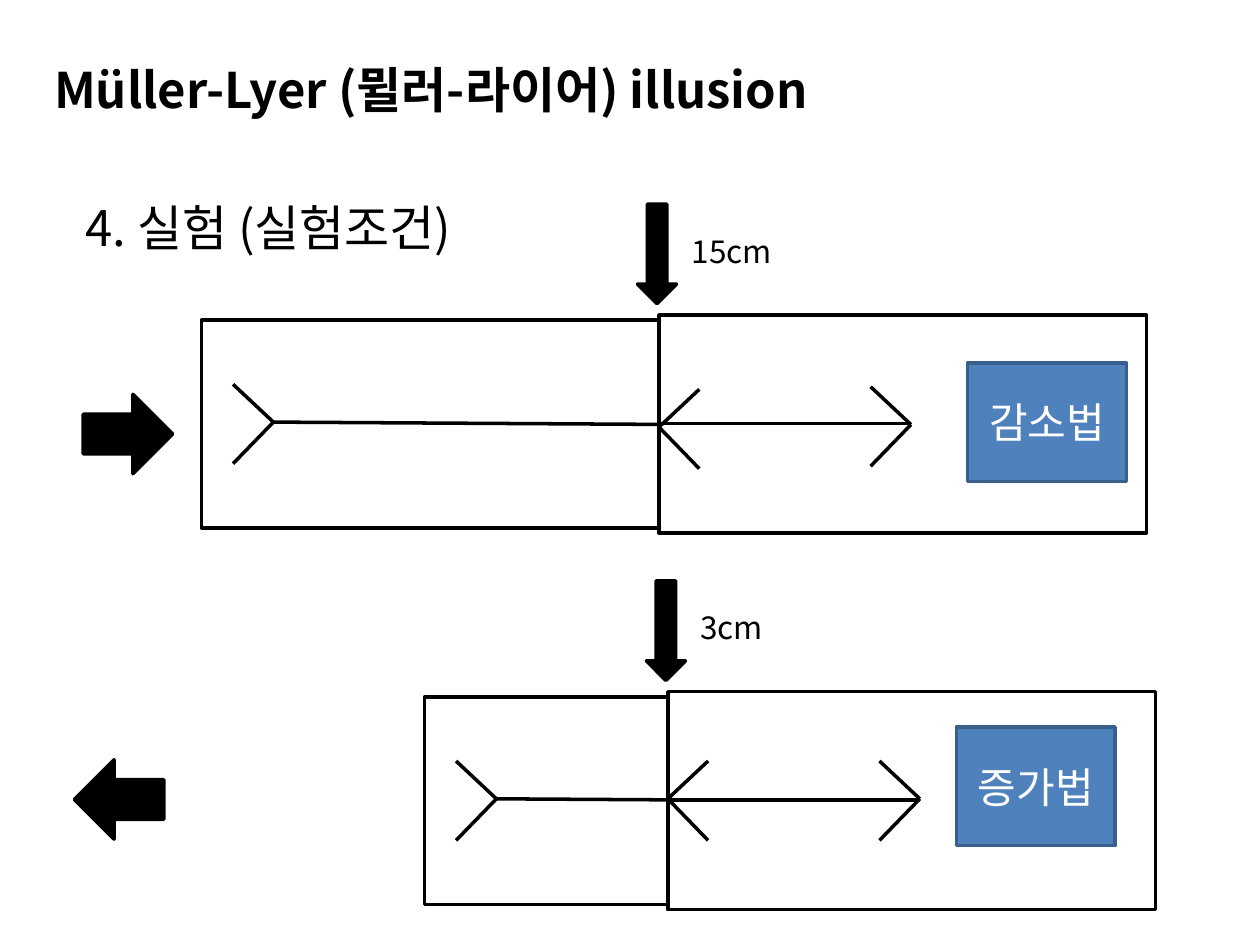
import pptx
import pptx.dml.color
import pptx.enum.shapes
import pptx.enum.text
import pptx.oxml.ns
import pptx.util
from lxml import etree
from pptx.util import Inches

FONT = "Noto Sans CJK KR"
BLACK, WHITE, BLUE, DARK_BLUE = "000000", "FFFFFF", "4F81BD", "3A5F8C"
SHAPE = pptx.enum.shapes.MSO_SHAPE
ALIGN = pptx.enum.text.PP_ALIGN
ANCHOR = pptx.enum.text.MSO_ANCHOR


def color(value):
    return pptx.dml.color.RGBColor.from_string(value)


def write(shape, text, size, ink=BLACK, bold=False, align=ALIGN.LEFT, anchor=ANCHOR.TOP):
    frame = shape.text_frame
    frame.text = text
    frame_format = {"word_wrap": True, "vertical_anchor": anchor,
                    "auto_size": pptx.enum.text.MSO_AUTO_SIZE.NONE}
    for name, value in frame_format.items():
        setattr(frame, name, value)
    para = frame.paragraphs[0]
    para.alignment = align
    para.space_before = pptx.util.Pt(0)
    span = para.runs[0]
    for name, value in {"name": FONT, "size": pptx.util.Pt(size), "bold": bold}.items():
        setattr(span.font, name, value)
    span.font.color.rgb = color(ink)
    # East Asian text needs its own font entry
    east_asian = etree.SubElement(span.font._element, pptx.oxml.ns.qn("a:ea"))
    east_asian.set("typeface", FONT)


def place(shape, box):
    for name, value in zip(("left", "top", "width", "height"), box):
        setattr(shape, name, Inches(value))


def add_box(page, preset, box, fill=BLACK, outline=BLACK):
    shape = page.shapes.add_shape(preset, *map(Inches, box))
    shape.shadow.inherit = False
    shape.fill.solid()
    shape.fill.fore_color.rgb = color(fill)
    shape.line.color.rgb = color(outline)
    shape.line.width = pptx.util.Pt(2)
    return shape


def add_line(page, start, end):
    line = page.shapes.add_connector(
        pptx.enum.shapes.MSO_CONNECTOR.STRAIGHT, *map(Inches, start + end))
    line.line.color.rgb = color(BLACK)
    line.line.width = pptx.util.Pt(2)
    properties = line._element.find(pptx.oxml.ns.qn("p:spPr"))
    etree.SubElement(properties, pptx.oxml.ns.qn("a:effectLst"))


def add_fins(page, tip, reach):
    """Draw two strokes meeting at the tip, starting reach inches to its side."""
    x, y = tip
    for rise in (-0.3, 0.33):
        add_line(page, (x + reach, y + rise), tip)


def draw_headings(page):
    title, body = page.placeholders
    place(title, (0.33, 0.42, 6.32, 0.57))
    write(title, "Müller-Lyer (뮐러-라이어) illusion", 28, bold=True)
    place(body, (0.58, 1.52, 6.46, 0.57))
    write(body, "4. 실험 (실험조건)", 28)
    properties = body.text_frame.paragraphs[0]._p.get_or_add_pPr()
    properties.set("marL", "0")
    properties.set("indent", "0")
    etree.SubElement(properties, pptx.oxml.ns.qn("a:buNone"))


def draw_slider(page, box):
    """Draw the sliding card with the outward fins."""
    left, top, width, height = box
    add_box(page, SHAPE.RECTANGLE, box, fill=WHITE)
    tip = (left + 0.57, top + 0.81)
    add_line(page, tip, (left + width, top + 0.83))
    add_fins(page, tip, -0.32)


def draw_cover(page, box, tip_drops):
    """Draw the fixed card with the inward fins."""
    left, top, width, height = box
    add_box(page, SHAPE.RECTANGLE, box, fill=WHITE)
    add_line(page, (left + 2, top + 0.86), (left, top + 0.86))
    left_drop, right_drop = tip_drops
    add_fins(page, (left, top + left_drop), 0.32)
    add_fins(page, (left + 2, top + right_drop), -0.32)


def draw_start_mark(page, box, distance):
    left, top, width, height = box
    add_box(page, SHAPE.DOWN_ARROW, box)
    label = page.shapes.add_textbox(
        *map(Inches, (left + 0.33, top + 0.17, 0.85, 0.4)))
    write(label, distance, 18)


def draw_trial(page, origin, slider_left, distance, method, method_offset,
               push_at, push_turn, tip_drops):
    left, top = origin
    push = add_box(page, SHAPE.RIGHT_ARROW, push_at + (0.71, 0.63))
    push.rotation = push_turn
    draw_start_mark(page, (left - 0.17, top - 0.88, 0.31, 0.79), distance)
    draw_slider(page, (slider_left, top + 0.04, 3.87, 1.65))
    draw_cover(page, (left, top, 3.87, 1.73), tip_drops)
    shift, drop = method_offset
    tag = add_box(page, SHAPE.FLOWCHART_PROCESS,
                  (left + shift, top + drop, 1.26, 0.94), BLUE, DARK_BLUE)
    write(tag, method, 24, WHITE, align=ALIGN.CENTER, anchor=ANCHOR.MIDDLE)


def main():
    deck = pptx.Presentation()
    deck.slide_width, deck.slide_height = Inches(10), Inches(7.5)
    page = deck.slides.add_slide(deck.slide_layouts[1])
    draw_headings(page)
    draw_trial(page, (5.23, 2.5), 1.6, "15cm", "감소법", (2.45, 0.38),
               push_at=(0.66, 3.13), push_turn=0, tip_drops=(0.89, 0.87))
    draw_trial(page, (5.3, 5.49), 3.37, "3cm", "증가법", (2.29, 0.28),
               push_at=(0.59, 6.03), push_turn=180, tip_drops=(0.85, 0.85))
    deck.save("out.pptx")


if __name__ == "__main__":
    main()
